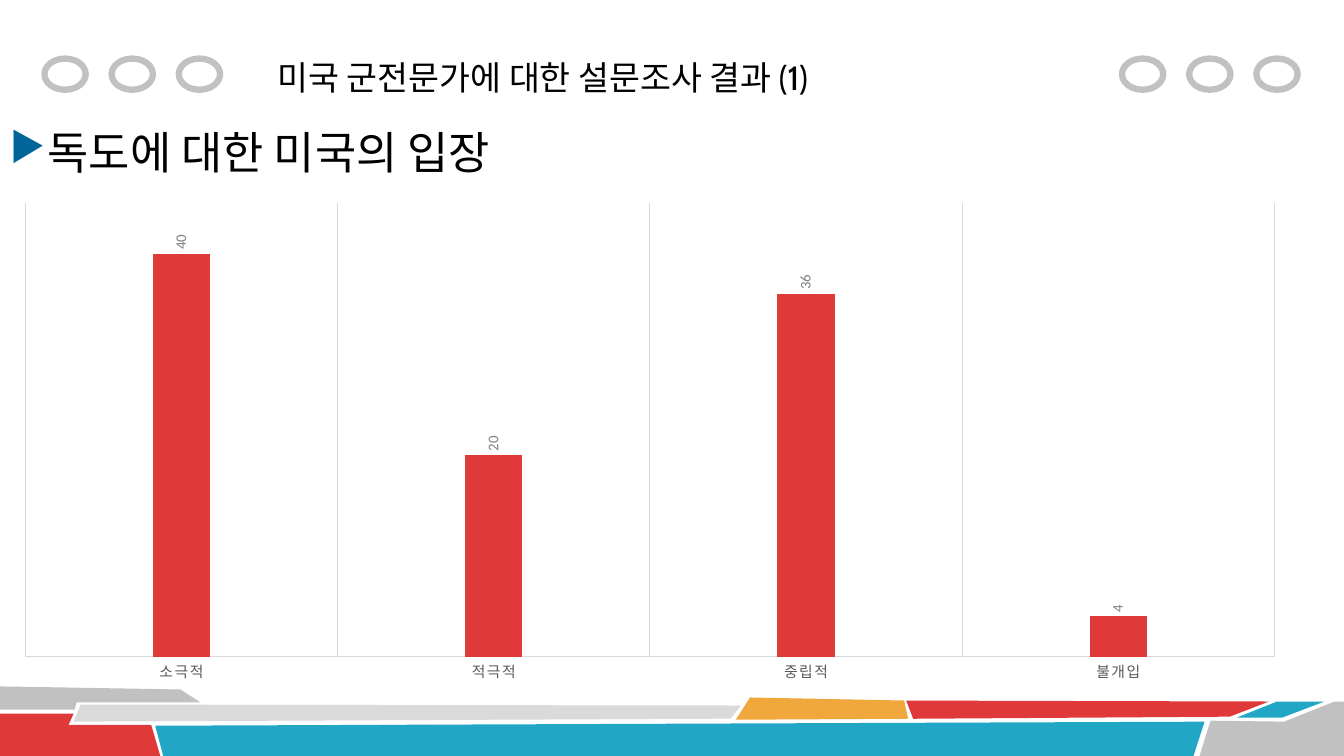
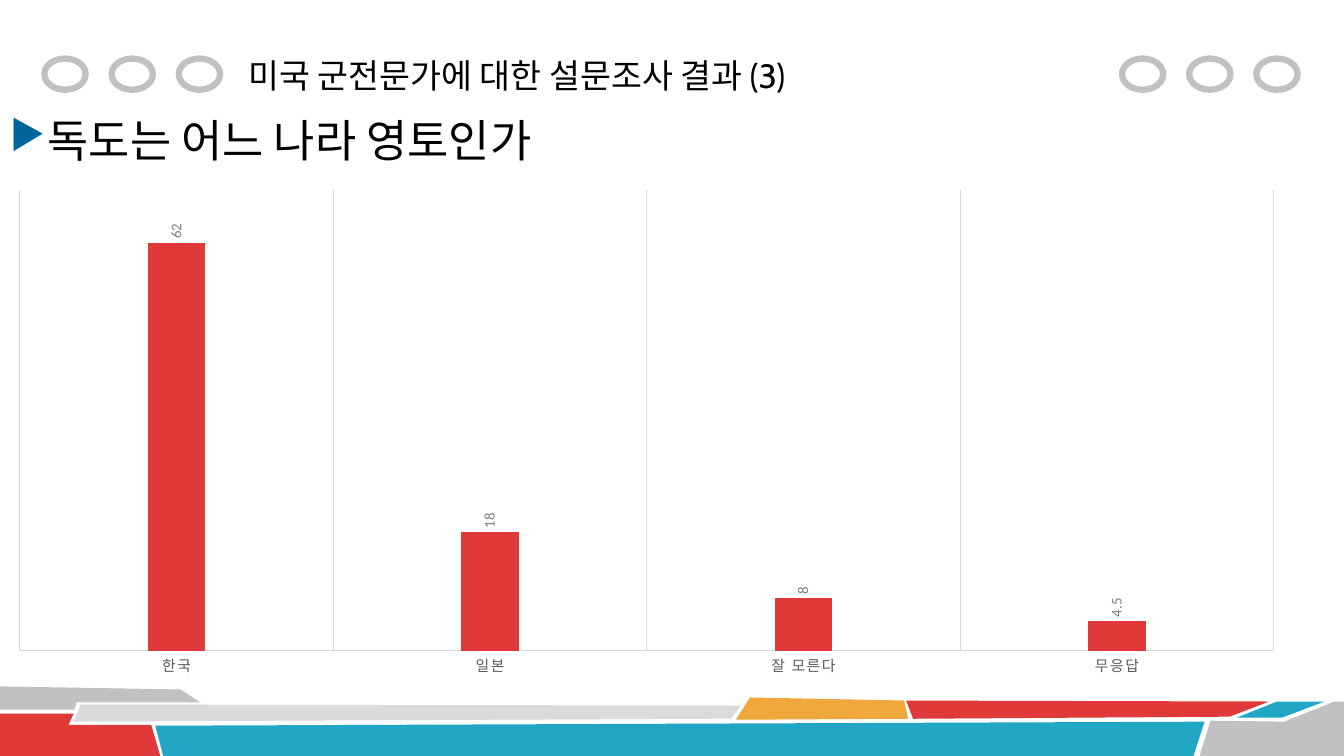
from dataclasses import dataclass

from lxml.etree import SubElement
from pptx import Presentation
from pptx.chart.chart import Chart
from pptx.chart.data import CategoryChartData
from pptx.dml.color import RGBColor
from pptx.enum.chart import XL_CHART_TYPE as ChartType
from pptx.enum.chart import XL_LABEL_POSITION as LabelPosition
from pptx.enum.chart import XL_TICK_MARK as TickMark
from pptx.enum.shapes import MSO_SHAPE as ShapeKind
from pptx.enum.shapes import PP_PLACEHOLDER as PlaceholderKind
from pptx.enum.text import MSO_ANCHOR as Anchor
from pptx.enum.text import MSO_AUTO_SIZE as AutoSize
from pptx.enum.text import PP_ALIGN as Align
from pptx.oxml import parse_xml
from pptx.oxml.ns import nsdecls, qn
from pptx.slide import Slide, SlideLayout
from pptx.text.text import Font
from pptx.util import Pt

COLORS = {
    "text": "000000",
    "bullet": "006699",
    "red": "DF3939",
    "teal": "21A6C5",
    "orange": "F0A73C",
    "gray": "C1C1C1",
    "light": "DADADA",
    "grid": "D9D9D9",
    "category": "595959",
    "value": "808080",
}
TITLE_FONT, BODY_FONT = "Cabin", "Calibri"
RING_GROUP_LEFTS = (31.7, 801.4)
RING_PITCH = 48


@dataclass(frozen=True)
class Band:
    color: str
    points: tuple[tuple[float, float], ...]


@dataclass(frozen=True)
class Box:
    left: float
    top: float
    width: float
    height: float

    def lengths(self) -> tuple[Pt, Pt, Pt, Pt]:
        return Pt(self.left), Pt(self.top), Pt(self.width), Pt(self.height)


@dataclass(frozen=True)
class Survey:
    title: str
    title_box: Box
    question: str
    question_box: Box
    answers: dict[str, float]
    axis_max: float
    chart_box: Box
    plot_area: Box


BANDS = (
    Band("gray", ((0, 490.3), (128.9, 492.5), (143.3, 501.8), (54.7, 501.8), (53.3, 506.9), (0, 506.9))),
    Band("red", ((0, 509.8), (52.6, 509.8), (49, 517.7), (108, 517.7), (114.5, 540), (0, 540))),
    Band("light", ((57.6, 503.3), (529.2, 504), (522, 513.4), (52.6, 515.5))),
    Band("teal", ((110.9, 518.4), (860.4, 515.5), (852.5, 540), (116.6, 540))),
    Band("orange", ((535.7, 498.2), (645.8, 500.4), (648.7, 513.4), (525.6, 514.1))),
    Band("red", ((647.3, 500.4), (906.5, 501.1), (878.4, 511.9), (652.3, 513.4))),
    Band("teal", ((912.2, 501.1), (946.1, 501.1), (915.8, 512.6), (883.4, 512.6))),
    Band("gray", ((864.7, 514.8), (917.3, 515.5), (953.3, 501.1), (960, 501.1), (960, 540), (856.8, 540))),
)

SURVEYS = (
    Survey(
        "미국 군전문가에 대한 설문조사 결과 (1)",
        Box(75.6, 10.1, 624.2, 90),
        "독도에 대한 미국의 입장",
        Box(0, 85.7, 828, 56.2),
        {"소극적": 40, "적극적": 20, "중립적": 36, "불개입": 4},
        45,
        Box(-52.6, 94.3, 995.8, 427),
        Box(0.071, 0.119, 0.896, 0.759),
    ),
    Survey(
        "미국 군전문가에 대한 설문조사 결과 (3) ",
        Box(59.8, 8.6, 624.2, 90),
        "독도는 어느 나라 영토인가",
        Box(0, 77, 828, 43.2),
        {"한국": 62, "일본": 18, "잘 모른다": 8, "무응답": 4.5},
        70,
        Box(-21.6, 131, 966.2, 366.5),
        Box(0.037, 0.013, 0.927, 0.898),
    ),
)


def rgb(color: str) -> RGBColor:
    return RGBColor.from_string(COLORS[color])


def set_font(font: Font, name: str, size: float, color: str) -> None:
    font.name = name
    font.size = Pt(size)
    font.color.rgb = rgb(color)


def add_decoration(slide: Slide, layout: SlideLayout) -> None:
    decorations = []
    for band in BANDS:
        start, *rest = [(Pt(x), Pt(y)) for x, y in band.points]
        outline = slide.shapes.build_freeform(*start)
        outline.add_line_segments(rest, close=True)
        strip = outline.convert_to_shape()
        strip.fill.solid()
        strip.fill.fore_color.rgb = rgb(band.color)
        strip.line.fill.background()
        decorations.append(strip)
    for group_left in RING_GROUP_LEFTS:
        for position in range(3):
            ring_box = Box(group_left + position * RING_PITCH, 41.8, 29.5, 22.3)
            ring = slide.shapes.add_shape(ShapeKind.OVAL, *ring_box.lengths())
            ring.fill.background()
            ring.line.color.rgb = rgb("gray")
            ring.line.width = Pt(4.5)
            decorations.append(ring)
    for decoration in decorations:
        decoration.shadow.inherit = False
        layout.shapes.element.append(decoration.element)


def add_title(slide: Slide, survey: Survey) -> None:
    title = slide.shapes.title
    title.left, title.top, title.width, title.height = survey.title_box.lengths()
    frame = title.text_frame
    frame.text = survey.title
    frame.word_wrap = True
    frame.auto_size = AutoSize.NONE
    frame.vertical_anchor = Anchor.MIDDLE
    heading = frame.paragraphs[0]
    heading.alignment = Align.CENTER
    set_font(heading.font, TITLE_FONT, 24, "text")


def add_question(slide: Slide, survey: Survey) -> None:
    frame = slide.shapes.add_textbox(*survey.question_box.lengths()).text_frame
    frame.word_wrap = True
    frame.text = survey.question
    question = frame.paragraphs[0]
    question.space_before = Pt(6.4)
    set_font(question.font, BODY_FONT, 32, "text")
    properties = question._p.get_or_add_pPr()
    properties.set("marL", str(Pt(27)))
    properties.set("indent", str(-Pt(27)))
    bullet = [
        f'<a:buClr {nsdecls("a")}><a:srgbClr val="{COLORS["bullet"]}"/></a:buClr>',
        f'<a:buSzPct {nsdecls("a")} val="90000"/>',
        f'<a:buChar {nsdecls("a")} char="▶"/>',
    ]
    default_run = properties.find(qn("a:defRPr"))
    for part in map(parse_xml, bullet):
        if default_run is None:
            properties.append(part)
        else:
            default_run.addprevious(part)


def place_plot_area(chart: Chart, area: Box) -> None:
    plot_area = chart.element.xpath("c:chart/c:plotArea")[0]
    for old_layout in plot_area.findall(qn("c:layout")):
        plot_area.remove(old_layout)
    layout = parse_xml(f'<c:layout {nsdecls("c")}/>')
    manual = SubElement(layout, qn("c:manualLayout"))
    settings = {
        "layoutTarget": "inner", "xMode": "edge", "yMode": "edge",
        "x": area.left, "y": area.top, "w": area.width, "h": area.height,
    }
    for tag, setting in settings.items():
        SubElement(manual, qn(f"c:{tag}")).set("val", str(setting))
    plot_area.insert(0, layout)


def add_answer_chart(slide: Slide, survey: Survey) -> None:
    answers = CategoryChartData()
    answers.categories = list(survey.answers)
    answers.add_series("Series 1", list(survey.answers.values()))
    chart = slide.shapes.add_chart(
        ChartType.COLUMN_CLUSTERED, *survey.chart_box.lengths(), answers
    ).chart
    chart.has_title = False
    chart.has_legend = False
    set_font(chart.font, BODY_FONT, 10, "text")

    plot = chart.plots[0]
    plot.gap_width = 444
    plot.overlap = -90
    plot.vary_by_categories = False
    columns = plot.series[0]
    columns.format.fill.solid()
    columns.format.fill.fore_color.rgb = rgb("red")
    counts = columns.data_labels
    counts.show_value = True
    counts.position = LabelPosition.OUTSIDE_END
    set_font(counts.font, BODY_FONT, 10.6, "value")
    for body in chart.element.xpath(".//c:dLbls/c:txPr/a:bodyPr"):
        body.set("rot", "-5400000")
        body.set("vert", "horz")

    category_axis = chart.category_axis
    category_axis.major_tick_mark = TickMark.NONE
    category_axis.minor_tick_mark = TickMark.NONE
    category_axis.has_major_gridlines = True
    for line in (category_axis.format.line, category_axis.major_gridlines.format.line):
        line.color.rgb = rgb("grid")
        line.width = Pt(0.75)
    set_font(category_axis.tick_labels.font, BODY_FONT, 10.6, "category")
    for run_style in chart.element.xpath(".//c:catAx/c:txPr//a:defRPr"):
        run_style.set("spc", "120")

    value_axis = chart.value_axis
    value_axis.minimum_scale = 0
    value_axis.maximum_scale = survey.axis_max
    value_axis.has_major_gridlines = False
    value_axis.visible = False
    place_plot_area(chart, survey.plot_area)


def main() -> None:
    deck = Presentation()
    deck.slide_width, deck.slide_height = Pt(960), Pt(540)
    layout = deck.slide_layouts[5]
    for placeholder in list(layout.placeholders):
        if placeholder.placeholder_format.type != PlaceholderKind.TITLE:
            layout.shapes.element.remove(placeholder.element)
    slides = [deck.slides.add_slide(layout) for _ in SURVEYS]
    add_decoration(slides[0], layout)
    for slide, survey in zip(slides, SURVEYS):
        add_title(slide, survey)
        add_question(slide, survey)
        add_answer_chart(slide, survey)
    deck.save("out.pptx")


if __name__ == "__main__":
    main()
